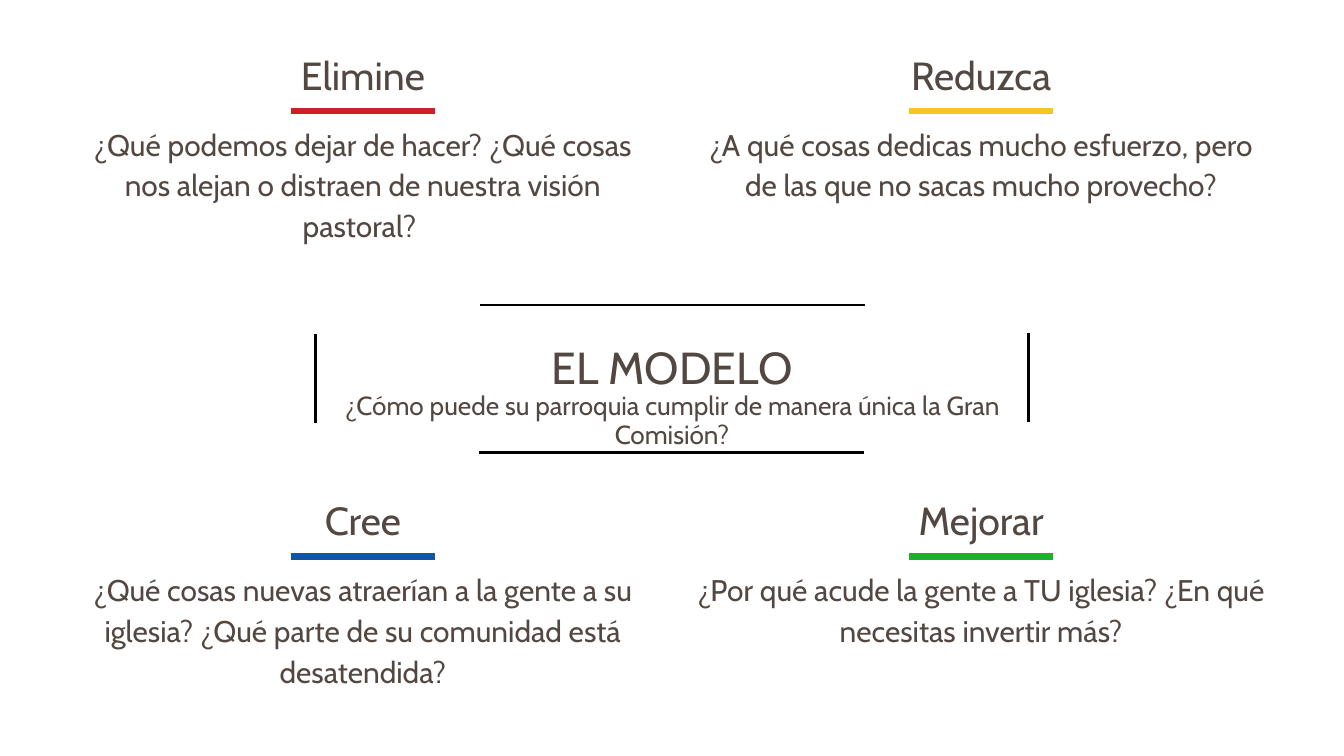
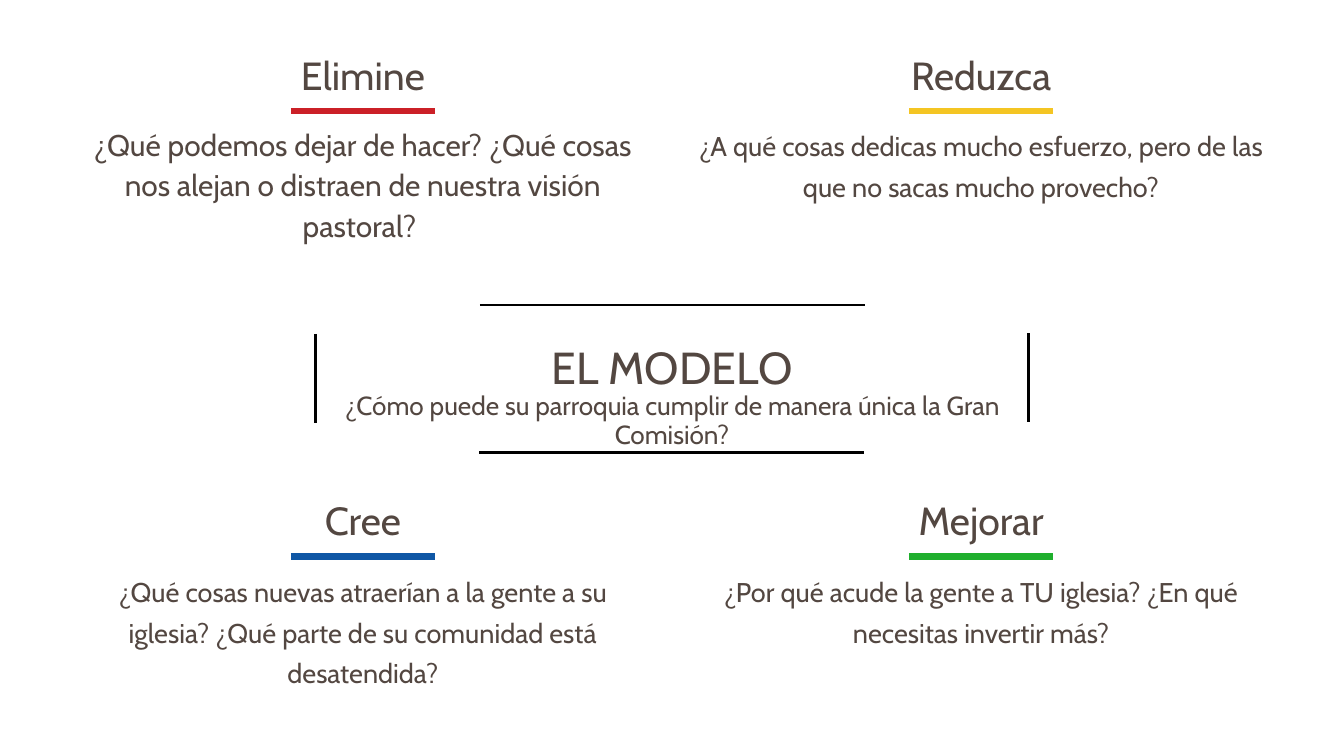
from dataclasses import dataclass

from lxml import etree
from pptx import Presentation
from pptx.dml.color import RGBColor
from pptx.enum import shapes, text
from pptx.oxml import ns
from pptx.util import Inches, Pt


@dataclass(frozen=True)
class Theme:
    font: str = "Cabin"
    ink: str = "534741"
    frame: str = "000000"
    background: str = "FFFFFF"
    red: str = "CB2027"
    yellow: str = "F4C523"
    green: str = "1FAF2D"
    blue: str = "0F57A5"
    heading: tuple = (42, 43.1)
    question_leading: float = 43.6
    model: tuple = (48, 67.2)
    mission: tuple = (28, 31.5)
    accent_width: float = 6.92
    frame_width: float = 3


THEME = Theme()
LEFT, RIGHT = 5.4, 14.6
TOP, BOTTOM = 0.86, 7.49
HEADING_WIDTH, QUESTION_WIDTH, ACCENT_LENGTH = 5.64, 8.55, 2.14
QUESTION_LINE = 0.6

QUADRANTS = [
    ("Elimine", "¿Qué podemos dejar de hacer? ¿Qué cosas nos alejan o distraen de nuestra visión pastoral? ",
     LEFT, TOP, THEME.red, 3),
    ("Reduzca", "¿A qué cosas dedicas mucho esfuerzo, pero de las que no sacas mucho provecho?",
     RIGHT, TOP, THEME.yellow, 2),
    ("Mejorar", "¿Por qué acude la gente a TU iglesia? ¿En qué necesitas invertir más?",
     RIGHT, BOTTOM, THEME.green, 2),
    ("Cree", "¿Qué cosas nuevas atraerían a la gente a su iglesia? ¿Qué parte de su comunidad está desatendida?",
     LEFT, BOTTOM, THEME.blue, 3),
]
FRAME = [
    (7.14, 4.54, 12.87, 4.54),
    (7.13, 6.73, 12.86, 6.73),
    (4.69, 4.97, 4.69, 6.29),
    (15.3, 4.96, 15.3, 6.28),
]
QUESTION_SIZES = [(32, 32, 32, 32), (32, 29, 29, 29)]


class Deck:
    def __init__(self, theme):
        self.theme = theme
        self.presentation = Presentation()
        self.presentation.slide_width = Inches(20)
        self.presentation.slide_height = Inches(11.25)
        self.slide = None

    def add_slide(self):
        self.slide = self.presentation.slides.add_slide(self.presentation.slide_layouts[6])
        fill = self.slide.background.fill
        fill.solid()
        fill.fore_color.rgb = RGBColor.from_string(self.theme.background)

    def label(self, parent, words, center, top, width, height, style):
        size, leading = style
        box = parent.add_textbox(Inches(center - width / 2), Inches(top), Inches(width), Inches(height))
        frame = box.text_frame
        frame.word_wrap = True
        frame.auto_size = text.MSO_AUTO_SIZE.SHAPE_TO_FIT_TEXT
        frame.margin_left = frame.margin_right = frame.margin_top = frame.margin_bottom = 0
        frame.text = words
        paragraph = frame.paragraphs[0]
        paragraph.alignment = text.PP_ALIGN.CENTER
        paragraph.line_spacing = Pt(leading)
        font = paragraph.runs[0].font
        font.name = self.theme.font
        font.size = Pt(size)
        font.color.rgb = RGBColor.from_string(self.theme.ink)

    def rule(self, parent, ends, color, width):
        line = parent.add_connector(shapes.MSO_CONNECTOR.STRAIGHT, *map(Inches, ends))
        line.line.color.rgb = RGBColor.from_string(color)
        line.line.width = Pt(width)
        etree.SubElement(line._element.spPr, ns.qn("a:effectLst"))

    def quadrant(self, heading, question, center, top, color, lines, size):
        group = self.slide.shapes.add_group_shape().shapes
        self.label(group, heading, center, top, HEADING_WIDTH, 0.61, self.theme.heading)
        self.label(group, question, center, top + 0.95, QUESTION_WIDTH, lines * QUESTION_LINE,
                   (size, self.theme.question_leading))
        accent = top + 0.79
        self.rule(group, (center - ACCENT_LENGTH / 2, accent, center + ACCENT_LENGTH / 2, accent),
                  color, self.theme.accent_width)

    def model(self):
        parent = self.slide.shapes
        self.label(parent, "EL MODELO", 10, 4.92, 5.71, 0.89, self.theme.model)
        self.label(parent, "¿Cómo puede su parroquia cumplir de manera única la Gran Comisión?",
                   10, 5.82, 11.2, 0.45, self.theme.mission)
        for ends in FRAME:
            self.rule(parent, ends, self.theme.frame, self.theme.frame_width)


def main():
    deck = Deck(THEME)
    for sizes in QUESTION_SIZES:
        deck.add_slide()
        for quadrant, size in zip(QUADRANTS, sizes):
            deck.quadrant(*quadrant, size)
        deck.model()
    deck.presentation.save("out.pptx")


if __name__ == "__main__":
    main()
